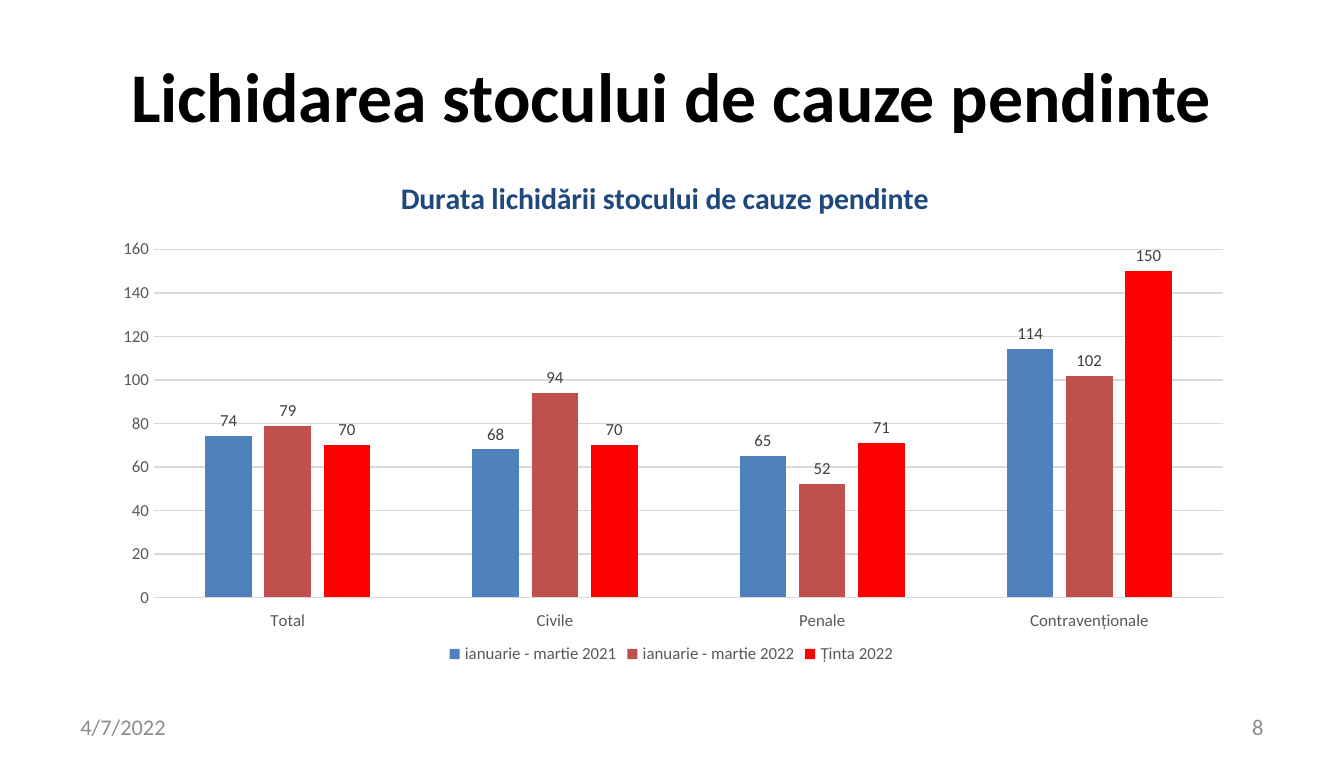
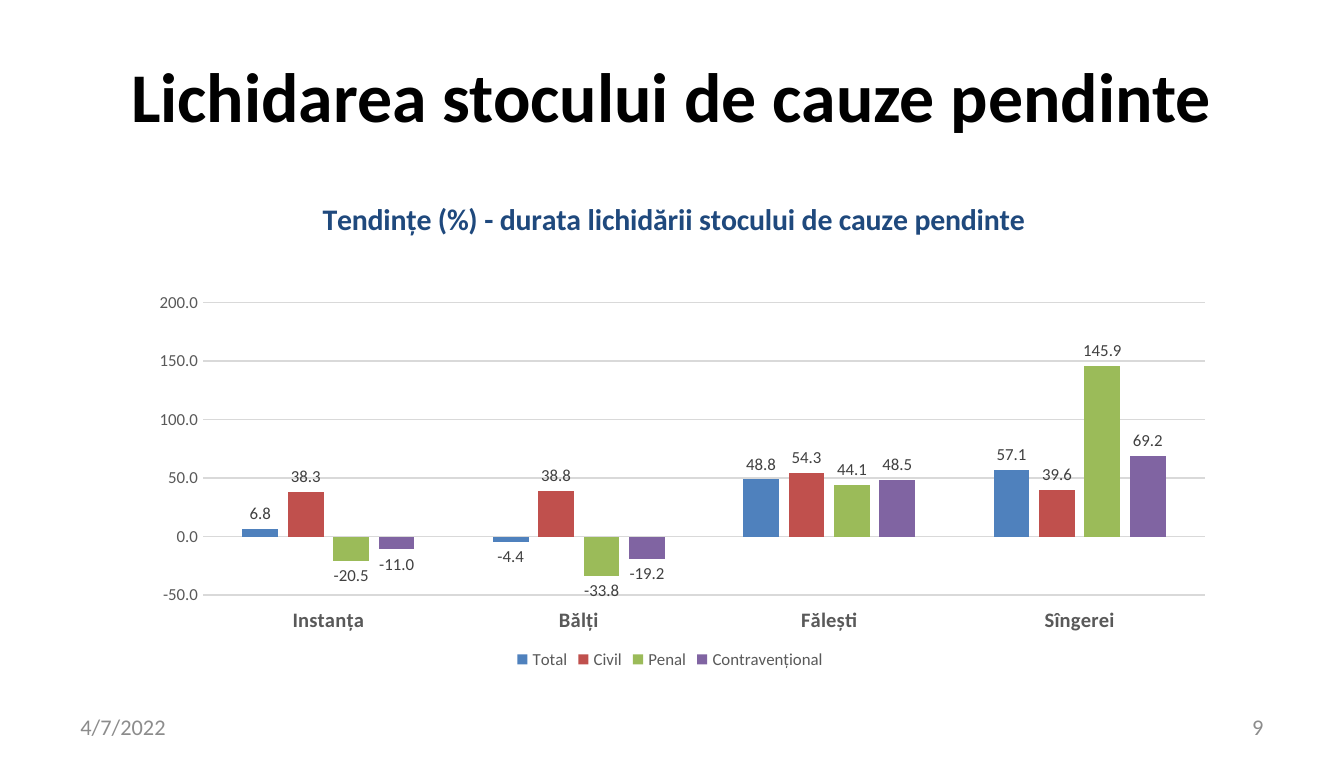
from dataclasses import dataclass

from lxml import etree
from pptx import Presentation
from pptx.chart.data import CategoryChartData
from pptx.dml.color import RGBColor
from pptx.enum.chart import (
    XL_CHART_TYPE, XL_LABEL_POSITION, XL_LEGEND_POSITION, XL_TICK_LABEL_POSITION, XL_TICK_MARK,
)
from pptx.enum.text import MSO_ANCHOR, MSO_AUTO_SIZE, PP_ALIGN
from pptx.oxml.ns import qn
from pptx.util import Inches, Pt

LEFT, CENTER, RIGHT = PP_ALIGN.LEFT, PP_ALIGN.CENTER, PP_ALIGN.RIGHT
CLUSTERED = XL_CHART_TYPE.COLUMN_CLUSTERED
OUTSIDE_END = XL_LABEL_POSITION.OUTSIDE_END
LEGEND_BOTTOM = XL_LEGEND_POSITION.BOTTOM
BELOW_PLOT = XL_TICK_LABEL_POSITION.LOW
NO_TICK = XL_TICK_MARK.NONE
TITLE_ONLY = 5


@dataclass(frozen=True)
class Theme:
    font: str = "Calibri"
    black: str = "000000"
    footer: str = "8C8C8C"
    heading: str = "1F497D"
    axis_text: str = "595959"
    label_text: str = "404040"
    grid: str = "D9D9D9"
    blue: str = "4F81BD"
    brick: str = "C0504D"
    red: str = "FF0000"
    green: str = "9BBB59"
    purple: str = "8064A2"
    title_size: float = 37.4
    heading_size: int = 16
    footer_size: int = 12
    chart_size: int = 10
    category_size: int = 11
    small_size: int = 9


THEME = Theme()

TITLE = "Lichidarea stocului de cauze pendinte"
DATE = "4/7/2022"
FIRST_NUMBER = 8
TITLE_BOX = (0.5, 0.23, 9, 0.95)
DATE_BOX = (0.5, 5.26, 2.33, 0.3)
NUMBER_BOX = (7.17, 5.26, 2.33, 0.3)

# Series: name, values, colour, label format. Layouts are fractions of the chart.
CHARTS = [
    {
        "heading": "Durata lichidării stocului de cauze pendinte",
        "heading_at": (0.26, 0.03),
        "box": (0.72, 1.17, 8.55, 3.81),
        "plot": (0.05, 0.18, 0.93, 0.68),
        "scale": (0, 160, 20),
        "axis_format": "#,##0",
        "category_font": {"size": THEME.small_size},
        "categories": ["Total", "Civile", "Penale", "Contravenționale"],
        "series": [
            ("ianuarie - martie 2021", (74, 68, 65, 114), THEME.blue, "#,##0"),
            ("ianuarie - martie 2022", (79, 94, 52, 102), THEME.brick, "#,##0"),
            ("Ținta 2022", (70, 70, 71, 150), THEME.red, "0"),
        ],
    },
    {
        "heading": "Tendințe (%) - durata lichidării stocului de cauze pendinte",
        "heading_at": (0.19, 0.03),
        "box": (0.75, 1.33, 8.47, 3.69),
        "plot": (0.09, 0.25, 0.88, 0.59),
        "scale": (-50, 200, 50),
        "axis_format": "0.0",
        "category_font": {"size": THEME.category_size, "bold": True},
        "categories": ["Instanța", "Bălți", "Fălești", "Sîngerei"],
        "series": [
            ("Total", (6.8, -4.4, 48.8, 57.1), THEME.blue, "0.0"),
            ("Civil", (38.3, 38.8, 54.3, 39.6), THEME.brick, "0.0"),
            ("Penal", (-20.5, -33.8, 44.1, 145.9), THEME.green, "0.0"),
            ("Contravențional", (-11, -19.2, 48.5, 69.2), THEME.purple, "0.0"),
        ],
    },
]


def style_font(font, size, color, bold=False):
    font.name = THEME.font
    font.size = Pt(size)
    font.bold = bold
    font.color.rgb = RGBColor.from_string(color)


def write_text(shape, text, size, color, bold=False, align=LEFT):
    frame = shape.text_frame
    frame.word_wrap = True
    frame.auto_size = MSO_AUTO_SIZE.NONE
    frame.vertical_anchor = MSO_ANCHOR.MIDDLE
    paragraph = frame.paragraphs[0]
    paragraph.alignment = align
    paragraph.space_after = Pt(6)
    run = paragraph.add_run()
    run.text = text
    style_font(run.font, size, color, bold)


def add_frame(slide, number):
    """Fill the title and add the date and slide number."""
    title = slide.shapes.title
    title.left, title.top, title.width, title.height = map(Inches, TITLE_BOX)
    write_text(title, TITLE, THEME.title_size, THEME.black, bold=True, align=CENTER)
    for box, text, align in ((DATE_BOX, DATE, LEFT), (NUMBER_BOX, str(number), RIGHT)):
        footer = slide.shapes.add_textbox(*map(Inches, box))
        write_text(footer, text, THEME.footer_size, THEME.footer, align=align)


def set_layout(parent, index, fractions, inner=False):
    """Place a chart part by fractions of the chart: x, y and optionally w, h."""
    for old in parent.findall(qn("c:layout")):
        parent.remove(old)
    layout = etree.Element(qn("c:layout"))
    manual = etree.SubElement(layout, qn("c:manualLayout"))
    settings = [("layoutTarget", "inner")] if inner else []
    settings += [("xMode", "edge"), ("yMode", "edge")]
    settings += zip("xywh", map(str, fractions))
    for tag, value in settings:
        etree.SubElement(manual, qn(f"c:{tag}")).set("val", value)
    parent.insert(index, layout)


def style_line(line):
    line.color.rgb = RGBColor.from_string(THEME.grid)
    line.width = Pt(0.75)


def style_axes(chart, content):
    category, value = chart.category_axis, chart.value_axis
    for axis in (category, value):
        axis.major_tick_mark = axis.minor_tick_mark = NO_TICK
    style_font(category.tick_labels.font, color=THEME.axis_text, **content["category_font"])
    category.tick_label_position = BELOW_PLOT
    style_line(category.format.line)
    style_font(value.tick_labels.font, THEME.small_size, THEME.axis_text)
    value.tick_labels.number_format = content["axis_format"]
    value.tick_labels.number_format_is_linked = False
    value.minimum_scale, value.maximum_scale, value.major_unit = content["scale"]
    value.format.line.fill.background()
    value.has_major_gridlines = True
    style_line(value.major_gridlines.format.line)


def style_series(series, color, label_format):
    series.invert_if_negative = False
    series.format.fill.solid()
    series.format.fill.fore_color.rgb = RGBColor.from_string(color)
    labels = series.data_labels
    labels.show_value = True
    labels.number_format = label_format
    labels.number_format_is_linked = False
    labels.position = OUTSIDE_END
    style_font(labels.font, THEME.small_size, THEME.label_text)


def add_column_chart(slide, content):
    data = CategoryChartData()
    data.categories = content["categories"]
    for name, values, _, label_format in content["series"]:
        data.add_series(name, values, number_format=label_format)
    box = map(Inches, content["box"])
    chart = slide.shapes.add_chart(CLUSTERED, *box, data).chart
    style_font(chart.font, THEME.chart_size, THEME.black)

    chart.has_title = True
    run = chart.chart_title.text_frame.paragraphs[0].add_run()
    run.text = content["heading"]
    style_font(run.font, THEME.heading_size, THEME.heading, bold=True)
    chart.chart_title.include_in_layout = False
    title_element = chart.chart_title._element
    set_layout(title_element, 1, content["heading_at"])

    chart.has_legend = True
    chart.legend.position = LEGEND_BOTTOM
    chart.legend.include_in_layout = False
    style_font(chart.legend.font, THEME.small_size, THEME.axis_text)

    plot = chart.plots[0]
    plot.gap_width, plot.overlap, plot.vary_by_categories = 219, -27, False
    set_layout(plot._element.getparent(), 0, content["plot"], inner=True)
    style_axes(chart, content)
    for series, (_, _, color, label_format) in zip(plot.series, content["series"]):
        style_series(series, color, label_format)


def main():
    presentation = Presentation()
    presentation.slide_width, presentation.slide_height = Inches(10), Inches(5.67)
    for number, content in enumerate(CHARTS, FIRST_NUMBER):
        slide = presentation.slides.add_slide(presentation.slide_layouts[TITLE_ONLY])
        add_frame(slide, number)
        add_column_chart(slide, content)
    presentation.save("out.pptx")


if __name__ == "__main__":
    main()
